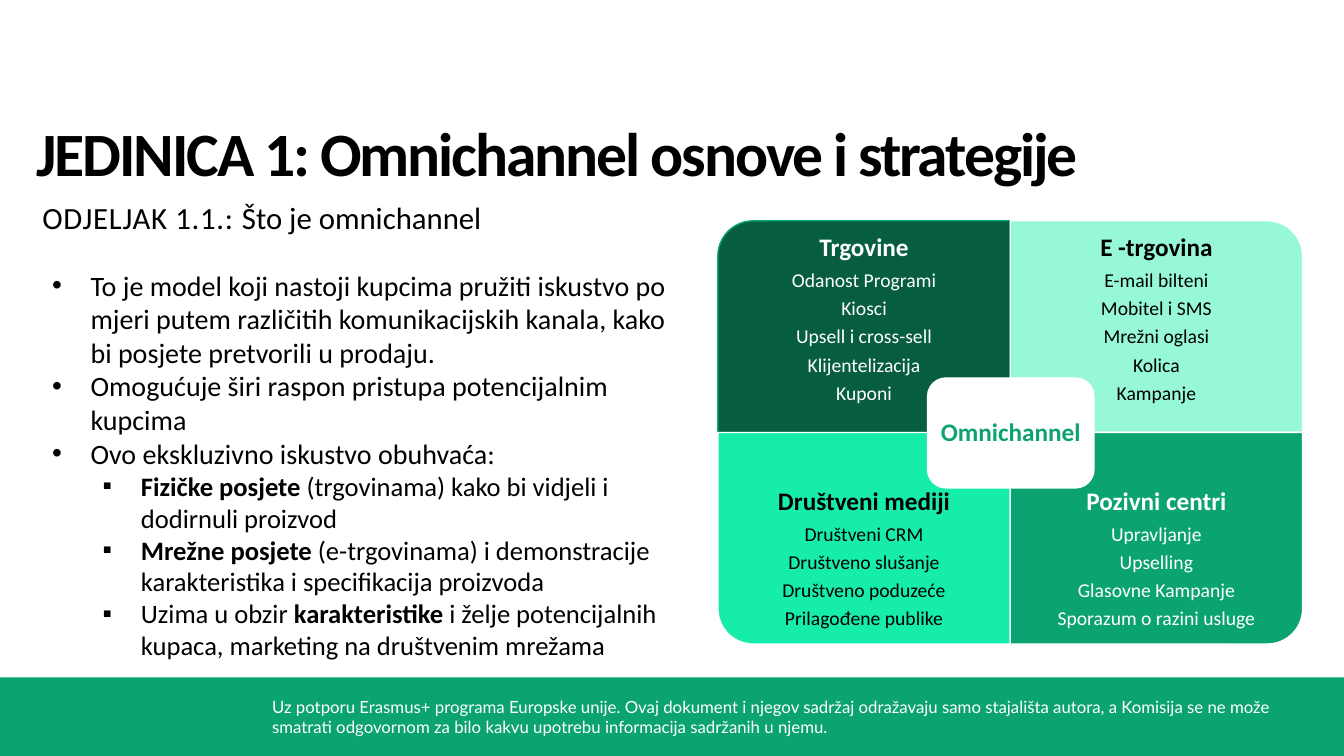
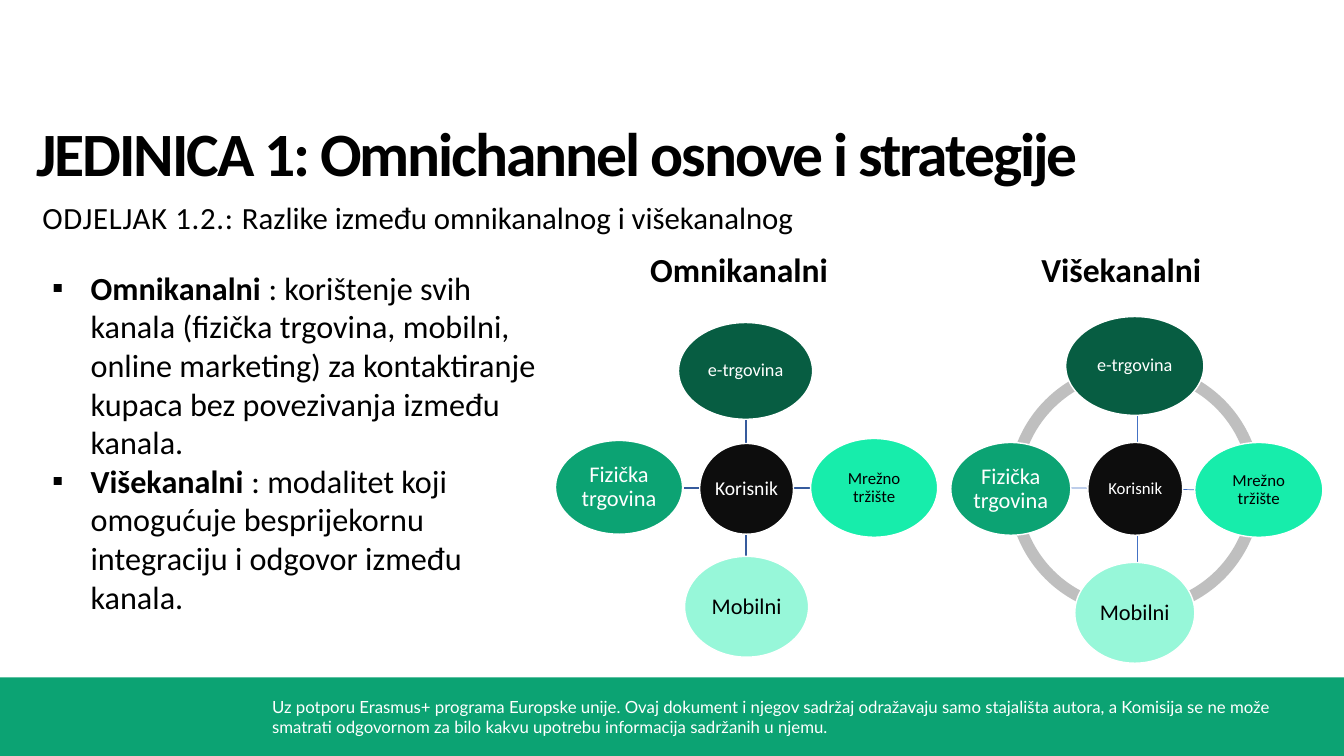
from lxml import etree
from pptx import Presentation
from pptx.dml.color import RGBColor
from pptx.enum.shapes import MSO_CONNECTOR, MSO_SHAPE
from pptx.enum.text import MSO_ANCHOR, PP_ALIGN
from pptx.oxml.ns import qn
from pptx.util import Inches, Pt

TOP, MIDDLE, BOTTOM = MSO_ANCHOR.TOP, MSO_ANCHOR.MIDDLE, MSO_ANCHOR.BOTTOM
CENTER = PP_ALIGN.CENTER
STRAIGHT = MSO_CONNECTOR.STRAIGHT
RECTANGLE, OVAL, ARC = MSO_SHAPE.RECTANGLE, MSO_SHAPE.OVAL, MSO_SHAPE.BLOCK_ARC
ROUNDED, ONE_ROUND = MSO_SHAPE.ROUNDED_RECTANGLE, MSO_SHAPE.ROUND_1_RECTANGLE

WHITE = RGBColor(0xFF, 0xFF, 0xFF)
BLACK = RGBColor(0x00, 0x00, 0x00)
HUB_BLACK = RGBColor(0x0D, 0x0D, 0x0D)
GREEN = RGBColor(0x0C, 0xA3, 0x73)
DARK_GREEN = RGBColor(0x07, 0x5D, 0x42)
MINT = RGBColor(0x17, 0xED, 0xAB)
PALE_MINT = RGBColor(0x97, 0xF7, 0xD9)
RING_GRAY = RGBColor(0xBF, 0xBF, 0xBF)
LINK_BLUE = RGBColor(0x36, 0x5B, 0x9D)
THIN_BLUE = RGBColor(0x44, 0x72, 0xC4)

TITLE = "JEDINICA 1: Omnichannel osnove i strategije"
DISCLAIMER = (
    "Uz potporu Erasmus+ programa Europske unije. Ovaj dokument i njegov sadržaj "
    "odražavaju samo stajališta autora, a Komisija se ne može smatrati odgovornom "
    "za bilo kakvu upotrebu informacija sadržanih u njemu."
)


def add_part(slide, box, kind=None, fill=None, outline=None,
             margins=(0.1, 0.05, 0.1, 0.05), anchor=TOP):
    box = [Inches(length) for length in box]
    if kind is None:
        part = slide.shapes.add_textbox(*box)
    else:
        part = slide.shapes.add_shape(kind, *box)
        part.shadow.inherit = False
        part.fill.solid()
        part.fill.fore_color.rgb = fill
        if outline is None:
            part.line.fill.background()
        else:
            part.line.color.rgb = outline
            part.line.width = Pt(1)
    frame = part.text_frame
    frame.word_wrap = True
    frame.vertical_anchor = anchor
    frame.margin_left, frame.margin_top, frame.margin_right, frame.margin_bottom = map(Inches, margins)
    return part


def write(part, text, size, color=BLACK, bold=False, face="Calibri",
          bullet=None, level=0, diagram=False):
    frame = part.text_frame
    paragraph = frame.add_paragraph() if frame.text else frame.paragraphs[0]
    for index, piece in enumerate(text.split("*")):
        if piece:
            run = paragraph.add_run()
            run.text = piece
            if index % 2:
                run.font.bold = True
    if diagram:
        paragraph.alignment = CENTER
        paragraph.line_spacing = 0.9
        paragraph.space_after = Pt(size * 0.35)
    if bullet:
        paragraph.level = level
        properties = paragraph._p.get_or_add_pPr()
        properties.set("marL", str(Inches(0.38 + 0.5 * level)))
        properties.set("indent", str(Inches(-0.38)))
        etree.SubElement(properties, qn("a:buFont"), typeface="Arial")
        etree.SubElement(properties, qn("a:buChar"), char=bullet)
    font = paragraph.font
    font.name, font.size, font.bold = face, Pt(size), bold
    font.color.rgb = color
    return paragraph


prs = Presentation()
prs.slide_width, prs.slide_height = Inches(13.33), Inches(7.5)

sections = [
    ("ODJELJAK 1.1.: ", "Što je omnichannel", 6.54, [
        ("To je model koji nastoji kupcima pružiti iskustvo po mjeri putem različitih "
         "komunikacijskih kanala, kako bi posjete pretvorili u prodaju.", 20, "•", 0),
        ("Omogućuje širi raspon pristupa potencijalnim kupcima", 20, "•", 0),
        ("Ovo ekskluzivno iskustvo obuhvaća:", 20, "•", 0),
        ("*Fizičke posjete *(trgovinama) kako bi vidjeli i dodirnuli proizvod", 19, "▪", 1),
        ("*Mrežne posjete *(e-trgovinama) i demonstracije karakteristika i specifikacija "
         "proizvoda", 19, "▪", 1),
        ("Uzima u obzir *karakteristike *i želje potencijalnih kupaca, marketing na "
         "društvenim mrežama", 19, "▪", 1),
    ]),
    ("ODJELJAK 1.2.: ", "Razlike između omnikanalnog i višekanalnog", 5.16, [
        ("*Omnikanalni *: korištenje svih kanala (fizička trgovina, mobilni, online "
         "marketing) za kontaktiranje kupaca bez povezivanja između kanala.", 23, "▪", 0),
        ("*Višekanalni *: modalitet koji omogućuje besprijekornu integraciju i odgovor "
         "između kanala.", 23, "▪", 0),
    ]),
]

slides = []
for number, topic, body_width, points in sections:
    slide = prs.slides.add_slide(prs.slide_layouts[6])
    slides.append(slide)
    add_part(slide, (0, 6.72, 13.33, 0.78), RECTANGLE, GREEN)
    footer = add_part(slide, (2.6, 6.86, 10.42, 0.5))
    write(footer, DISCLAIMER, 12, WHITE, face="Lato")
    title = add_part(slide, (0.35, 1.12, 10.4, 0.75), margins=(0.01, 0.02, 0, 0))
    heading = write(title, TITLE, 44, bold=True)
    heading.runs[0].font._element.set("spc", "-150")
    subtitle = add_part(slide, (0.41, 1.94, 8.59, 0.67), margins=(0.01, 0.03, 0, 0))
    section = write(subtitle, f"{number}*", 22)
    section.runs[0].font._element.set("spc", "50")
    section.add_run().text = topic
    body = add_part(slide, (0.42, 2.61, body_width, 4.04))
    for text, size, bullet, level in points:
        write(body, text, size, bullet=bullet, level=level)

basics, comparison = slides

quadrants = [
    (270, DARK_GREEN, GREEN, WHITE, "Trgovine",
     ["Odanost Programi", "Kiosci", "Upsell i cross-sell", "Klijentelizacija", "Kuponi"]),
    (0, PALE_MINT, WHITE, BLACK, "E -trgovina",
     ["E-mail bilteni", "Mobitel i SMS", "Mrežni oglasi", "Kolica", "Kampanje"]),
    (180, MINT, WHITE, BLACK, "Društveni mediji",
     ["Društveni CRM", "Društveno slušanje", "Društveno poduzeće", "Prilagođene publike"]),
    (90, GREEN, WHITE, WHITE, "Pozivni centri",
     ["Upravljanje", "Upselling", "Glasovne Kampanje", "Sporazum o razini usluge"]),
]
cell_width, cell_height = 2.9, 2.1
for index, (rotation, fill, outline, color, channel, services) in enumerate(quadrants):
    row, column = divmod(index, 2)
    left, top = 7.12 + column * cell_width, 2.19 + row * cell_height
    width, height = (cell_height, cell_width) if rotation % 180 else (cell_width, cell_height)
    tile_box = (left + (cell_width - width) / 2, top + (cell_height - height) / 2, width, height)
    tile = add_part(basics, tile_box, ONE_ROUND, fill, outline)
    tile.rotation = rotation
    label = add_part(basics, (left, top, cell_width, cell_height),
                     margins=[0.14] * 4, anchor=BOTTOM if row else TOP)
    write(label, channel, 18, color, bold=True, diagram=True)
    for service in services:
        write(label, service, 14, color, diagram=True)

core = add_part(basics, (9.2, 3.75, 1.65, 1.09), ROUNDED, WHITE, WHITE, [0.07] * 4, MIDDLE)
write(core, "Omnichannel", 18, GREEN, bold=True, diagram=True)

links = [
    (7.4, 4.4, 7.4, 4.16, LINK_BLUE, 1),
    (7.87, 4.84, 8.04, 4.84, LINK_BLUE, 1),
    (7.4, 5.3, 7.4, 5.52, LINK_BLUE, 1),
    (6.94, 4.84, 6.78, 4.84, LINK_BLUE, 1),
    (10.6, 4.84, 11.95, 4.86, THIN_BLUE, 0.5),
    (11.28, 4.09, 11.28, 5.58, THIN_BLUE, 0.5),
]
for *ends, color, weight in links:
    link = comparison.shapes.add_connector(STRAIGHT, *map(Inches, ends))
    link.line.color.rgb = color
    link.line.width = Pt(weight)
    etree.SubElement(link._element.spPr, qn("a:effectLst"))

quarter_turn = 54
for quarter in range(4):
    arc = add_part(comparison, (10, 3.6, 2.51, 2.51), ARC, RING_GRAY)
    arc.adjustments[0] = quarter * quarter_turn
    arc.adjustments[1] = (quarter + 1) % 4 * quarter_turn
    arc.adjustments[2] = 0.046

nodes = [
    ("Korisnik", HUB_BLACK, WHITE,
     [(6.94, 4.4, 0.93, 0.9, 14), (10.79, 4.39, 0.94, 0.92, 12)]),
    ("e-trgovina", DARK_GREEN, WHITE,
     [(6.73, 3.2, 1.33, 0.96, 13), (10.57, 3.14, 1.37, 0.98, 13)]),
    ("Mrežno tržište", MINT, BLACK,
     [(8.04, 4.35, 1.26, 0.98, 12), (11.85, 4.39, 1.27, 0.94, 12)]),
    ("Mobilni", PALE_MINT, BLACK,
     [(6.79, 5.52, 1.23, 1, 16), (10.66, 5.58, 1.19, 1, 16)]),
    ("Fizička trgovina", GREEN, WHITE,
     [(5.51, 4.37, 1.26, 0.93, 16), (9.43, 4.39, 1.19, 0.92, 16)]),
]
for name, fill, color, places in nodes:
    for *box, size in places:
        node = add_part(comparison, box, OVAL, fill, WHITE, [0] * 4, MIDDLE)
        write(node, name, size, color, diagram=True)

for model, left in (("Omnikanalni", 6.35), ("Višekanalni", 10.23)):
    write(add_part(comparison, (left, 2.42, 2.1, 0.5)), model, 24, bold=True)

prs.save("out.pptx")
